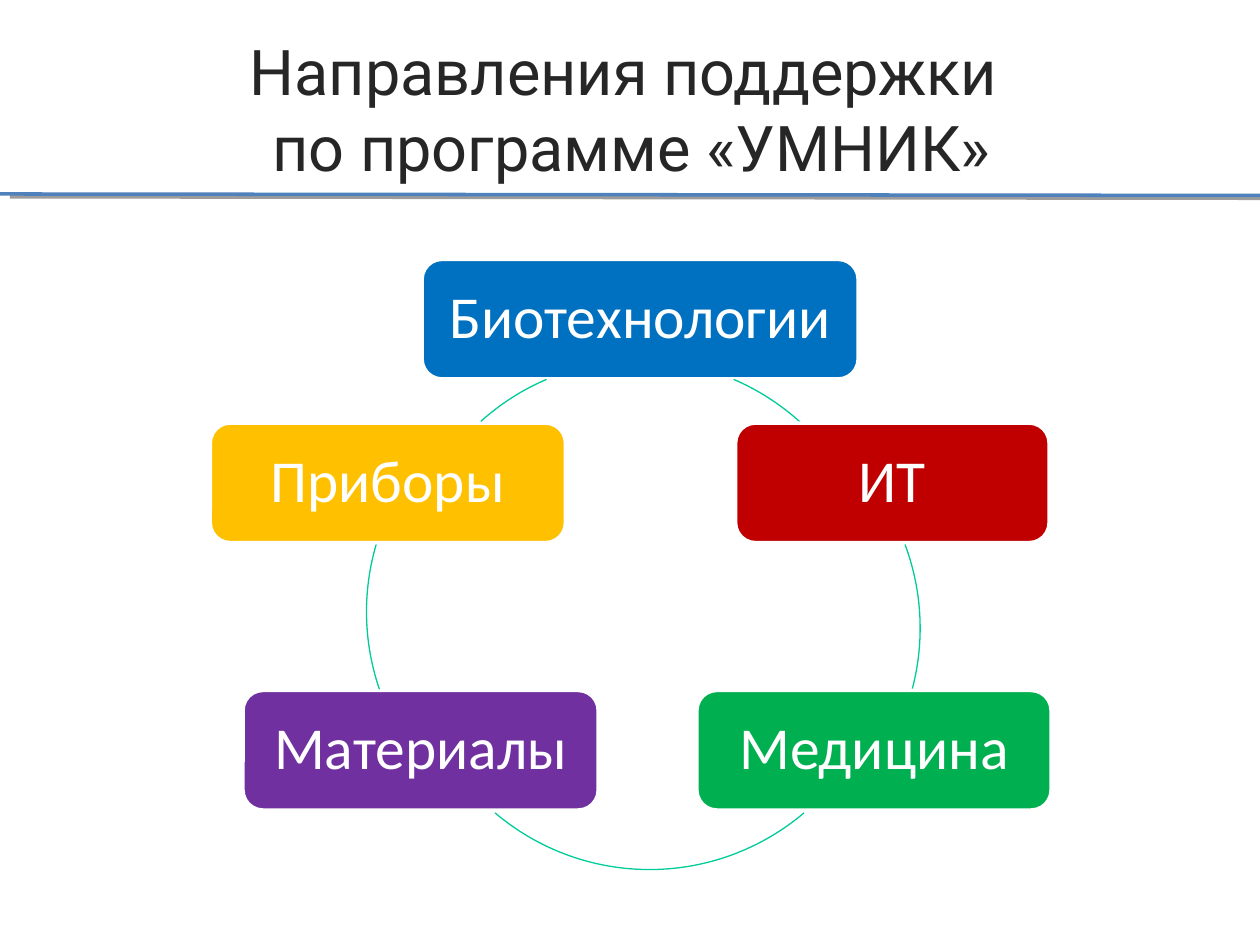
from dataclasses import dataclass

from lxml import etree
from pptx import Presentation
from pptx import util as u
from pptx.dml.color import RGBColor
from pptx.enum import shapes, text
from pptx.oxml import ns


@dataclass(frozen=True)
class Theme:
    title_font: str = "Roboto"
    node_font: str = "Calibri"
    title_size: float = 36
    node_size: float = 34
    title: str = "262626"
    white: str = "FFFFFF"
    rule: str = "4F81BD"
    shadow: str = "000000"
    arc: str = "00CC99"
    blue: str = "0070C0"
    red: str = "C00000"
    green: str = "00B050"
    purple: str = "7030A0"
    amber: str = "FFC000"


T = Theme()
NODE_H = 2.41
RING_D = 9.63

NODES = [
    ("Биотехнологии", T.blue, 4.27, 0, 8.79),
    ("ИТ", T.red, 10.59, 3.3, 6.32),
    ("Медицина", T.green, 9.81, 8.69, 7.14),
    ("Материалы", T.purple, 0.66, 8.69, 7.16),
    ("Приборы", T.amber, 0, 3.3, 7.16),
]
ARCS = [
    (3.84, 2.03, 293.2, 312.2),
    (4.68, 2.62, 339.5, 14.8),
    (4.04, 2.67, 49.7, 130.3),
    (3.15, 2.29, 161.1, 196.4),
    (3.86, 2.03, 228, 246.8),
]


def rgb(color):
    return RGBColor.from_string(color)


def set_line(sp, color, width):
    sp.line.color.rgb = rgb(color)
    sp.line.width = u.Pt(width)


def set_font(p, name, size, color):
    p.alignment = text.PP_ALIGN.CENTER
    p.font.name = name
    p.font.size = u.Pt(size)
    p.font.color.rgb = rgb(color)


def add_shadow(sp):
    effects = etree.SubElement(sp._element.spPr, ns.qn("a:effectLst"))
    shadow = etree.SubElement(effects, ns.qn("a:outerShdw"), dist=str(u.Pt(5.9)),
                              dir=str(16 * 60000), rotWithShape="0")
    color = etree.SubElement(shadow, ns.qn("a:srgbClr"), val=T.shadow)
    etree.SubElement(color, ns.qn("a:alpha"), val="38000")


def header(s, x, y, w, h):
    line = s.shapes.add_connector(shapes.MSO_CONNECTOR.STRAIGHT,
                                  u.Cm(x), u.Cm(y + h - 0.03), u.Cm(x + w), u.Cm(y + h))
    set_line(line, T.rule, 2)
    add_shadow(line)

    sp = s.shapes.title
    sp.left, sp.top = u.Cm(x + 1.3), u.Cm(y + 0.53)
    sp.width, sp.height = u.Cm(w - 2.54), u.Cm(3.18)
    tf = sp.text_frame
    tf.text = "Направления поддержки \nпо программе «УМНИК»"
    tf.word_wrap = True
    tf.auto_size = text.MSO_AUTO_SIZE.NONE
    tf.vertical_anchor = text.MSO_ANCHOR.TOP
    for p in tf.paragraphs:
        set_font(p, T.title_font, T.title_size, T.title)


def add_node(group, label, color, x, y, w):
    sp = group.shapes.add_shape(shapes.MSO_SHAPE.ROUNDED_RECTANGLE,
                                u.Cm(x), u.Cm(y), u.Cm(w), u.Cm(NODE_H))
    sp.shadow.inherit = False
    sp.fill.solid()
    sp.fill.fore_color.rgb = rgb(color)
    set_line(sp, T.white, 2)
    tf = sp.text_frame
    tf.margin_left = tf.margin_right = tf.margin_top = tf.margin_bottom = u.Cm(0.36)
    tf.word_wrap = True
    tf.vertical_anchor = text.MSO_ANCHOR.MIDDLE
    p = tf.paragraphs[0]
    p.text = label
    p.line_spacing = 0.9
    set_font(p, T.node_font, T.node_size, T.white)


def add_arc(group, x, y, start, end):
    sp = group.shapes.add_shape(shapes.MSO_SHAPE.ARC,
                                u.Cm(x), u.Cm(y), u.Cm(RING_D), u.Cm(RING_D))
    sp.shadow.inherit = False
    sp.fill.background()
    set_line(sp, T.arc, 0.75)
    for i, angle in enumerate((start, end)):
        sp.adjustments[i] = angle * 0.6


def cycle(s, x, y):
    group = s.shapes.add_group_shape()
    for (label, color, nx, ny, w), (ax, ay, start, end) in zip(NODES, ARCS):
        add_node(group, label, color, x + nx, y + ny, w)
        add_arc(group, x + ax, y + ay, start, end)


def main():
    prs = Presentation()
    prs.slide_width, prs.slide_height = u.Cm(25.4), u.Cm(19.05)
    s = prs.slides.add_slide(prs.slide_layouts.get_by_name("Title Only"))
    header(s, 0, 0, 25.4, 3.94)
    cycle(s, 4.24, 5.23)
    prs.save("out.pptx")


if __name__ == "__main__":
    main()
